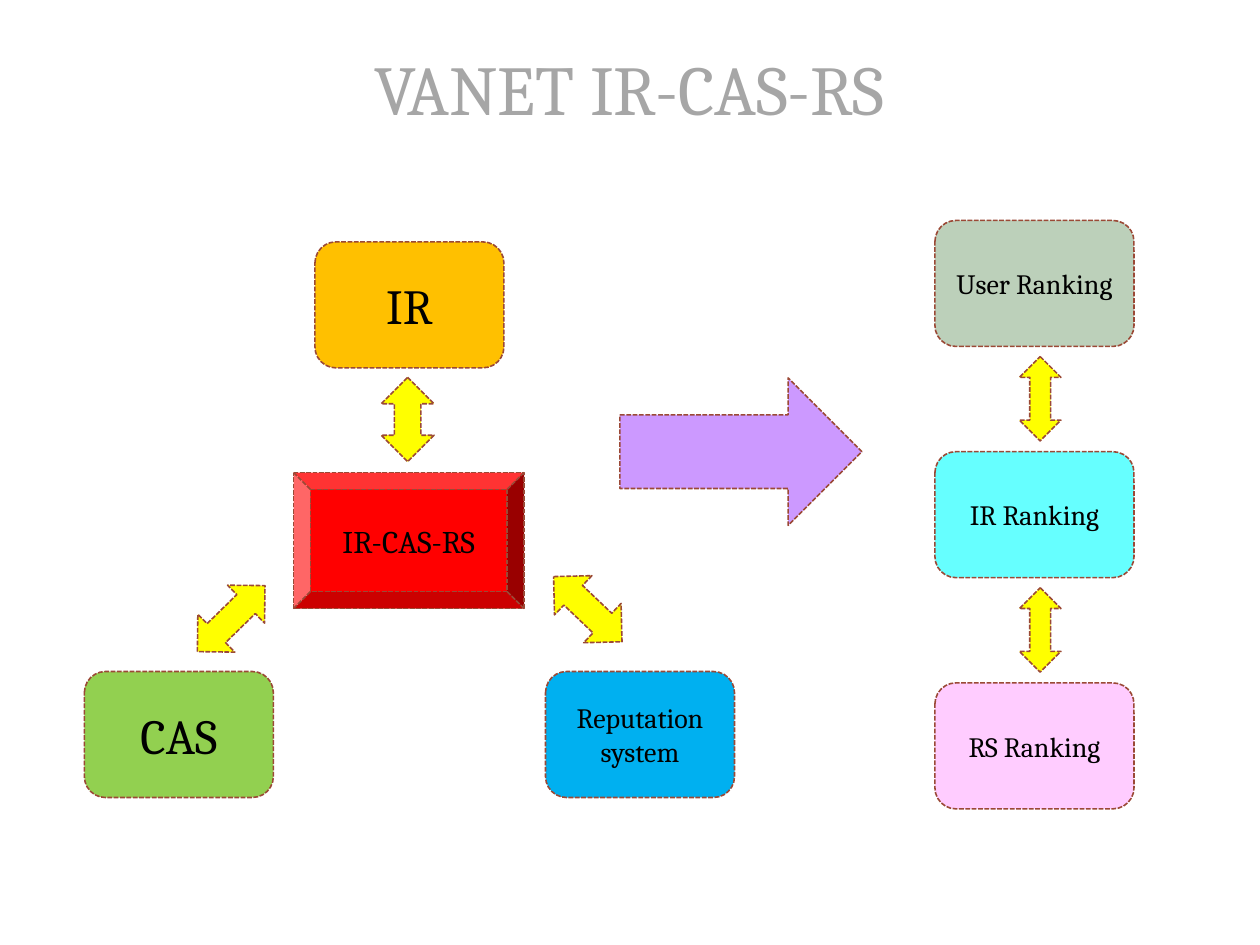
from pptx import Presentation
from pptx.dml.color import RGBColor
from pptx.enum.dml import MSO_LINE_DASH_STYLE as Dash
from pptx.enum.shapes import MSO_SHAPE as Shape
from pptx.enum.text import MSO_ANCHOR as Anchor, MSO_AUTO_SIZE as AutoSize, PP_ALIGN as Align
from pptx.util import Inches, Pt

FONT = "Cambria"
TITLE = "VANET IR-CAS-RS"
OUTLINE, YELLOW, PURPLE = "9B4936", "FFFF00", "CC99FF"

# Components: text, left, top, fill, text size
COMPONENT_SIZE = (1.5, 1)
COMPONENTS = [
    ("IR", 2.5, 1.92, "FFC000", 28),
    ("CAS", 0.67, 5.33, "92D050", 28),
    ("Reputation system", 4.33, 5.33, "00B0F0", 16),
]
HUB = ("IR-CAS-RS", 2.33, 3.75, 1.83, 1.08, "FF0000", 18)

# Rankings, top to bottom
RANKINGS = [("User Ranking", "BCD0BA"), ("IR Ranking", "66FFFF"), ("RS Ranking", "FFCCFF")]
RANKING_LEFT, RANKING_TOP, RANKING_STEP = 7.42, 1.75, 1.835
RANKING_SIZE = (1.58, 1)

# Arrows around the hub: left, top, width, height, rotation
HUB_LINKS = [
    (2.9, 3.12, 0.67, 0.42, 90),
    (1.46, 4.7, 0.75, 0.42, 315.7),
    (4.29, 4.62, 0.75, 0.43, 43.6),
]
RANKING_LINK = (7.92, 3, 0.67, 0.33)


def color(hex_value):
    return RGBColor.from_string(hex_value)


def write(frame, text, size, text_color):
    paragraph = frame.paragraphs[0]
    paragraph.alignment = Align.CENTER
    run = paragraph.add_run()
    run.text = text
    run.font.name = FONT
    run.font.size = Pt(size)
    run.font.color.rgb = color(text_color)


def add_block(slide, preset, left, top, width, height, fill, rotation=0):
    block = slide.shapes.add_shape(preset, *map(Inches, (left, top, width, height)))
    block.shadow.inherit = False
    block.rotation = rotation
    block.fill.solid()
    block.fill.fore_color.rgb = color(fill)
    block.line.color.rgb = color(OUTLINE)
    block.line.width = Pt(0.9)
    block.line.dash_style = Dash.SQUARE_DOT
    return block


def add_box(slide, preset, text, left, top, width, height, fill, size):
    frame = add_block(slide, preset, left, top, width, height, fill).text_frame
    frame.word_wrap = True
    frame.vertical_anchor = Anchor.MIDDLE
    write(frame, text, size, "000000")


def main():
    deck = Presentation()
    deck.slide_width, deck.slide_height = Inches(10), Inches(7.5)
    slide = deck.slides.add_slide(deck.slide_layouts[5])

    # Title
    title = slide.shapes.title
    title.left, title.top, title.width, title.height = map(Inches, (0.33, 0.25, 9.33, 0.83))
    title.text_frame.auto_size = AutoSize.NONE
    title.text_frame.vertical_anchor = Anchor.BOTTOM
    write(title.text_frame, TITLE, 40, "A6A6A6")

    # Hub and its components
    add_box(slide, Shape.BEVEL, *HUB)
    for text, left, top, fill, size in COMPONENTS:
        add_box(slide, Shape.ROUNDED_RECTANGLE, text, left, top, *COMPONENT_SIZE, fill, size)
    for *place, rotation in HUB_LINKS:
        add_block(slide, Shape.LEFT_RIGHT_ARROW, *place, YELLOW, rotation)

    # Arrow from the hub to the rankings
    add_block(slide, Shape.RIGHT_ARROW, 4.92, 3, 1.92, 1.17, PURPLE)

    # Ranking column, with an arrow between neighbours
    link_left, link_top, *link_size = RANKING_LINK
    for i, (text, fill) in enumerate(RANKINGS):
        offset = i * RANKING_STEP
        add_box(slide, Shape.ROUNDED_RECTANGLE, text, RANKING_LEFT, RANKING_TOP + offset,
                *RANKING_SIZE, fill, 16)
        if i < len(RANKINGS) - 1:
            add_block(slide, Shape.LEFT_RIGHT_ARROW, link_left, link_top + offset,
                      *link_size, YELLOW, 90)

    deck.save("out.pptx")


if __name__ == "__main__":
    main()
